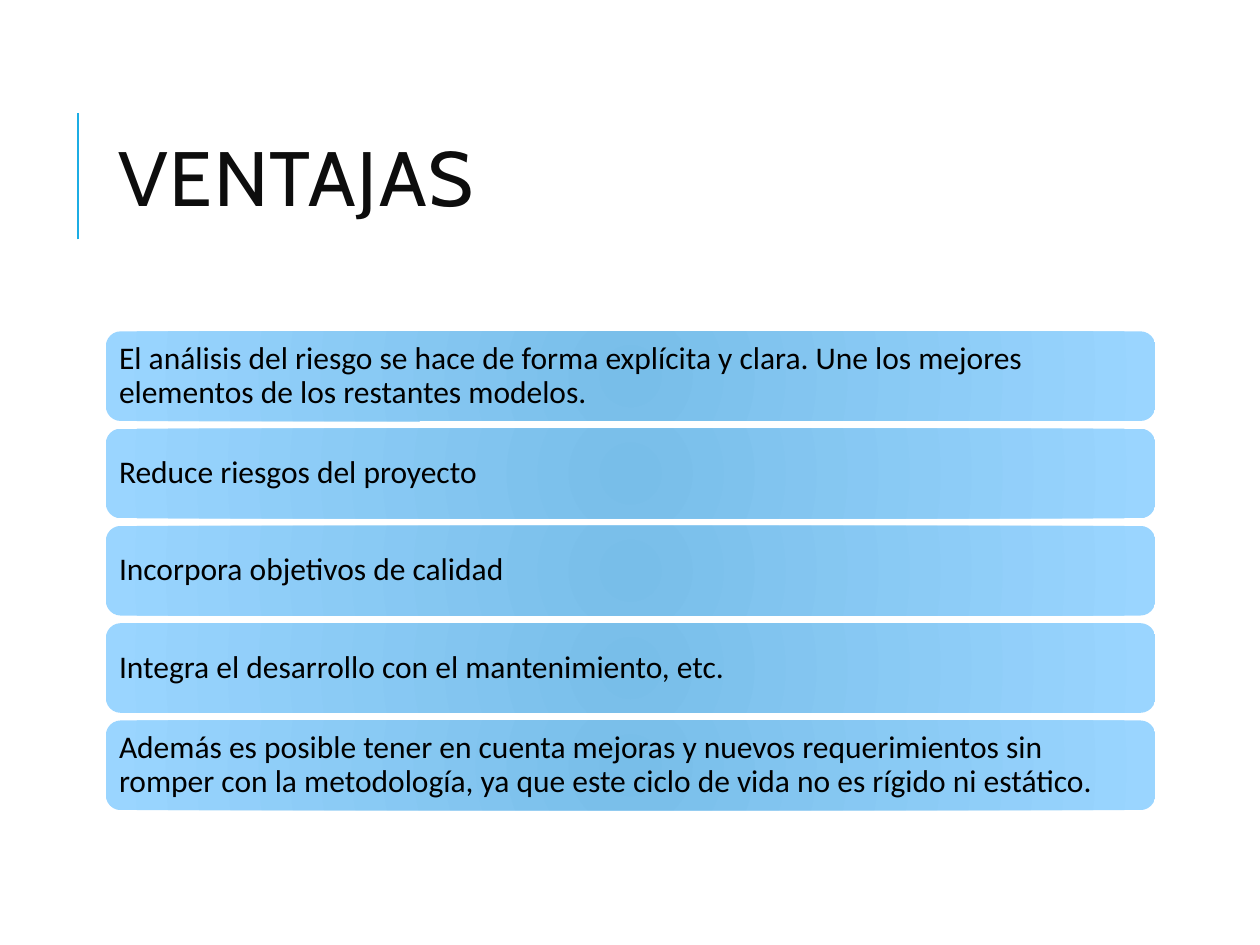
from lxml import etree
from pptx import Presentation
from pptx.dml.color import RGBColor
from pptx.enum.shapes import MSO_CONNECTOR as CONN, MSO_SHAPE as SHAPE
from pptx.enum.text import MSO_ANCHOR as ANCHOR, MSO_AUTO_SIZE as AUTO, PP_ALIGN as ALIGN
from pptx.oxml.ns import qn
from pptx.util import Inches, Pt

ADVANTAGES = [
    "El análisis del riesgo se hace de forma explícita y clara. Une los mejores elementos de los restantes modelos.",
    "Reduce riesgos del proyecto",
    "Incorpora objetivos de calidad",
    "Integra el desarrollo con el mantenimiento, etc.",
    "Además es posible tener en cuenta mejoras y nuevos requerimientos sin romper con la metodología, "
    "ya que este ciclo de vida no es rígido ni estático.",
]


def rgb(color):
    return RGBColor.from_string(color)


def format_text(sp, text, font, size, color, line_spacing):
    tf = sp.text_frame
    tf.text = text
    tf.word_wrap = True
    tf.auto_size = AUTO.NONE
    tf.vertical_anchor = ANCHOR.MIDDLE
    p = tf.paragraphs[0]
    p.alignment = ALIGN.LEFT
    p.line_spacing = line_spacing
    p.font.name = font
    p.font.size = Pt(size)
    p.font.color.rgb = rgb(color)
    return tf


def fill_radial(sp, inner, outer):
    sp.fill.gradient()
    for stop, color, position in zip(sp.fill.gradient_stops, (inner, outer), (0, 1)):
        stop.color.rgb = rgb(color)
        stop.position = position
    grad = sp._element.spPr.find(qn("a:gradFill"))
    grad.remove(grad.find(qn("a:lin")))
    circle = etree.Element(qn("a:path"), path="circle")
    etree.SubElement(circle, qn("a:fillToRect"), l="100000", t="100000", r="100000", b="100000")
    grad.find(qn("a:gsLst")).addnext(circle)


def add_title(slide, left, top, width, height):
    bar_x = left - Inches(0.22)
    bar_top = top + Inches(0.26)
    bar = slide.shapes.add_connector(CONN.STRAIGHT, bar_x, bar_top + Inches(1), bar_x, bar_top)
    bar.line.color.rgb = rgb("1CADE4")
    bar.line.width = Pt(1.5)
    etree.SubElement(bar._element.spPr, qn("a:effectLst"))

    title = slide.shapes.title
    title.left, title.top, title.width, title.height = left, top, width, height
    tf = format_text(title, "VENTAJAS", "Cabin", 44, "0D0D0D", 0.8)
    tf.paragraphs[0].runs[0].font._element.set("spc", "100")


def add_list(slide, left, top, width, height, items):
    gap = Inches(0.06)
    row_height = (height - gap * (len(items) - 1)) // len(items)
    for i, item in enumerate(items):
        sp = slide.shapes.add_shape(
            SHAPE.ROUNDED_RECTANGLE, left, top + i * (row_height + gap), width, row_height)
        sp.shadow.inherit = False
        sp.line.fill.background()
        fill_radial(sp, "78BEE9", "9AD5FF")
        tf = format_text(sp, item, "Calibri", 18, "000000", 0.9)
        tf.margin_left = tf.margin_right = tf.margin_top = tf.margin_bottom = Inches(0.07)


def main():
    prs = Presentation()
    prs.slide_width, prs.slide_height = Inches(10), Inches(7.5)
    slide = prs.slides.add_slide(prs.slide_layouts[5])
    add_title(slide, Inches(0.84), Inches(0.64), Inches(7.97), Inches(1.64))
    add_list(slide, Inches(0.84), Inches(2.63), Inches(8.33), Inches(3.8), ADVANTAGES)
    prs.save("out.pptx")


if __name__ == "__main__":
    main()
